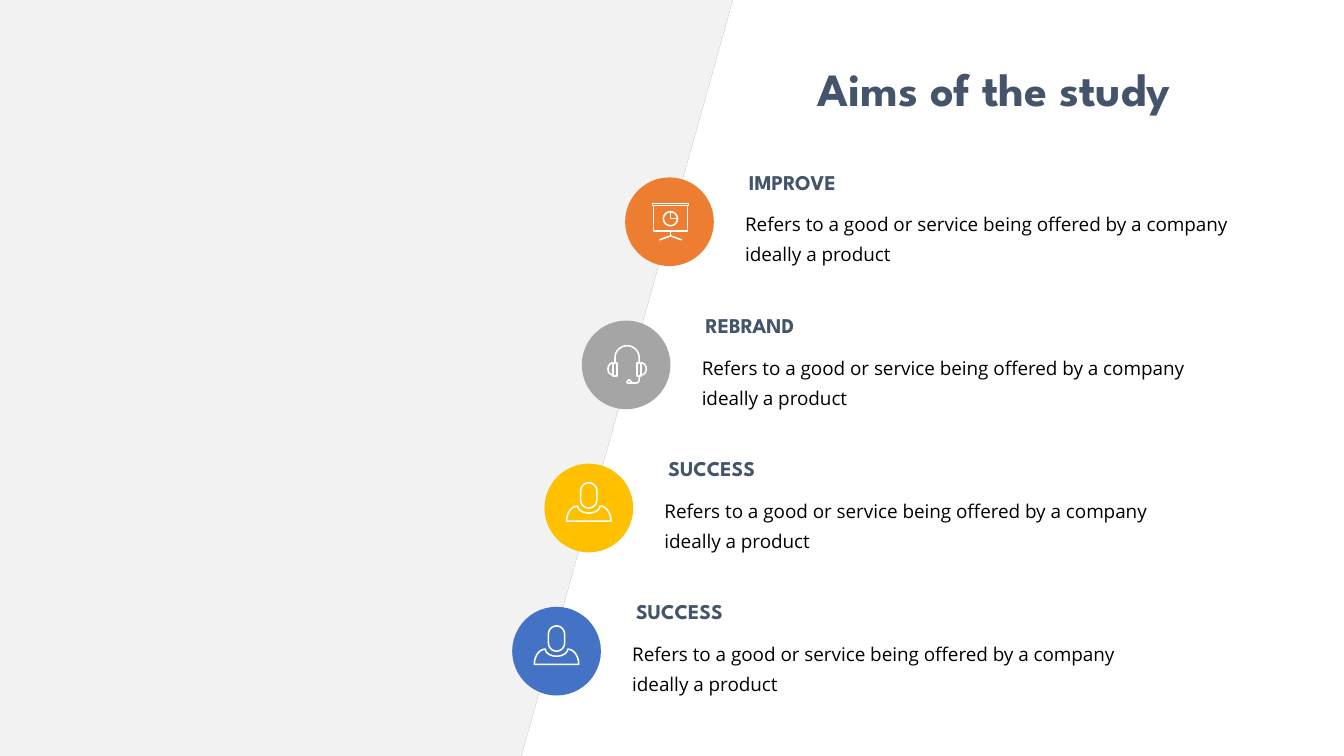
from math import cos, radians, sin

from lxml import etree
from pptx import Presentation
from pptx.dml.color import RGBColor
from pptx.enum.shapes import MSO_SHAPE
from pptx.enum.text import MSO_ANCHOR, MSO_AUTO_SIZE, PP_ALIGN
from pptx.oxml.ns import qn
from pptx.util import Inches, Pt

SLATE = RGBColor(0x44, 0x54, 0x6A)
PALE = RGBColor(0xF2, 0xF2, 0xF2)
WHITE = RGBColor(0xFF, 0xFF, 0xFF)
BLACK = RGBColor(0, 0, 0)
ORANGE = RGBColor(0xED, 0x7D, 0x31)
GREY = RGBColor(0xA5, 0xA5, 0xA5)
YELLOW = RGBColor(0xFF, 0xC0, 0x00)
BLUE = RGBColor(0x44, 0x72, 0xC4)

TITLE = "Aims of the study"
DETAIL = "Refers to a good or service being offered by a company ideally a product"
# heading, heading width, disc left, disc colour, icon
AIMS = [
    ("IMPROVE", 1.17, 6.20, ORANGE, "board"),
    ("REBRAND", 1.26, 5.77, GREY, "headset"),
    ("SUCCESS", 1.22, 5.40, YELLOW, "person"),
    ("SUCCESS", 1.22, 5.08, BLUE, "person"),
]

SLIDE_W, SLIDE_H = 13.33, 7.5
FIRST_DISC, AIM_PITCH, DISC = 1.76, 1.42, 0.88
PANEL = [(0, 0), (7.27, 0), (5.17, 7.51), (0, 7.51)]

TITLE_FONT = {"name": "League Spartan", "size": Pt(33), "bold": True}
HEADING_FONT = {"name": "League Spartan", "size": Pt(15), "bold": True}
DETAIL_FONT = {"name": "Open Sans", "size": Pt(13.5)}
TITLE_PARAGRAPH = {"alignment": PP_ALIGN.CENTER, "line_spacing": Pt(50)}
DETAIL_PARAGRAPH = {"line_spacing": Pt(21.5), "space_before": Pt(2.7)}
HEADING_FRAME = {"vertical_anchor": MSO_ANCHOR.MIDDLE}
DETAIL_FRAME = {
    "word_wrap": True,
    "margin_left": Inches(0.12), "margin_right": Inches(0.12),
    "margin_top": Inches(0.06), "margin_bottom": Inches(0.06),
}


def arc(cx, cy, rx, ry, start, end, steps=16):
    """Points on an ellipse; degrees run clockwise from the right."""
    angles = [radians(start + (end - start) * i / steps) for i in range(steps + 1)]
    return [(cx + rx * cos(a), cy + ry * sin(a)) for a in angles]


def box(left, top, right, bottom):
    return [(left, top), (right, top), (right, bottom), (left, bottom)]


# Strokes in inches from the disc's centre: (points, closed)
ICONS = {
    "board": [
        (box(-0.17, -0.18, 0.19, -0.16), True),
        (box(-0.16, -0.16, 0.18, 0.09), True),
        ([(0.01, 0.09), (0.01, 0.14)], False),
        ([(-0.1, 0.18), (0.01, 0.14), (0.12, 0.18)], False),
        (arc(0.01, -0.03, 0.07, 0.07, 0, 360), True),
        ([(0.01, -0.1), (0.01, -0.03), (0.08, -0.03)], False),
    ],
    "headset": [
        ([(-0.11, -0.03)] + arc(0.01, -0.07, 0.12, 0.12, 180, 360) + [(0.13, -0.03)], False),
        (box(-0.13, -0.02, -0.09, 0.11), True),
        (box(0.11, -0.02, 0.15, 0.11), True),
        (arc(-0.13, 0.04, 0.05, 0.06, 90, 270), False),
        (arc(0.15, 0.04, 0.05, 0.06, -90, 90), False),
        ([(0.13, 0.11)] + arc(0.1, 0.15, 0.03, 0.03, 0, 90) + [(0.05, 0.18)], False),
        (arc(0.03, 0.18, 0.02, 0.03, 180, 360), True),
    ],
    "person": [
        (arc(0, -0.17, 0.08, 0.08, 180, 360) + arc(0, -0.08, 0.08, 0.08, 0, 180), True),
        (arc(-0.11, 0.13, 0.11, 0.15, 180, 270) + arc(0, -0.02, 0.11, 0.07, 180, 0)
         + arc(0.11, 0.13, 0.11, 0.15, 270, 360), True),
    ],
}


def apply(target, values):
    for key, value in values.items():
        setattr(target, key, value)


def add_outline(slide, points, closed=True, dx=0, dy=0):
    spots = [(Inches(x + dx), Inches(y + dy)) for x, y in points]
    builder = slide.shapes.build_freeform(*spots[0])
    builder.add_line_segments(spots[1:], close=closed)
    outline = builder.convert_to_shape()
    outline.shadow.inherit = False
    return outline


def paint(shape, colour, opacity=None):
    shape.fill.solid()
    shape.fill.fore_color.rgb = colour
    shape.line.fill.background()
    if opacity is not None:
        tint = shape.fill._xPr.find(".//" + qn("a:srgbClr"))
        etree.SubElement(tint, qn("a:alpha")).set("val", str(opacity * 1000))


def add_text(slide, place, text, colour, font, paragraph=None, frame=None):
    label = slide.shapes.add_textbox(*map(Inches, place)).text_frame
    apply(label, {"word_wrap": False, "auto_size": MSO_AUTO_SIZE.SHAPE_TO_FIT_TEXT})
    apply(label, frame or {})
    apply(label.paragraphs[0], paragraph or {})
    run = label.paragraphs[0].add_run()
    run.text = text
    apply(run.font, font)
    run.font.color.rgb = colour


def add_icon(slide, name, cx, cy):
    for points, closed in ICONS[name]:
        stroke = add_outline(slide, points, closed, cx, cy)
        stroke.fill.background()
        stroke.line.color.rgb = WHITE
        stroke.line.width = Pt(1.1)


def add_aim(slide, row, heading, heading_w, left, colour, icon):
    top = FIRST_DISC + row * AIM_PITCH
    add_text(slide, (left + 1.13, top - 0.13, heading_w, 0.35), heading, SLATE,
             HEADING_FONT, frame=HEADING_FRAME)
    add_text(slide, (left + 1.07, top + 0.22, 5.25, 0.74), DETAIL, BLACK,
             DETAIL_FONT, DETAIL_PARAGRAPH, DETAIL_FRAME)
    disc = slide.shapes.add_shape(MSO_SHAPE.OVAL, *map(Inches, (left, top, DISC, DISC)))
    disc.shadow.inherit = False
    paint(disc, colour)
    add_icon(slide, icon, left + DISC / 2, top + DISC / 2)


def main():
    deck = Presentation()
    deck.slide_width, deck.slide_height = Inches(SLIDE_W), Inches(SLIDE_H)
    slide = deck.slides.add_slide(deck.slide_layouts[6])
    paint(add_outline(slide, PANEL), SLATE, opacity=42)
    paint(add_outline(slide, PANEL, dy=-0.01), PALE)
    add_text(slide, (7.82, 0.41, 4.08, 0.73), TITLE, SLATE, TITLE_FONT, TITLE_PARAGRAPH)
    for row, aim in enumerate(AIMS):
        add_aim(slide, row, *aim)
    deck.save("out.pptx")


if __name__ == "__main__":
    main()
